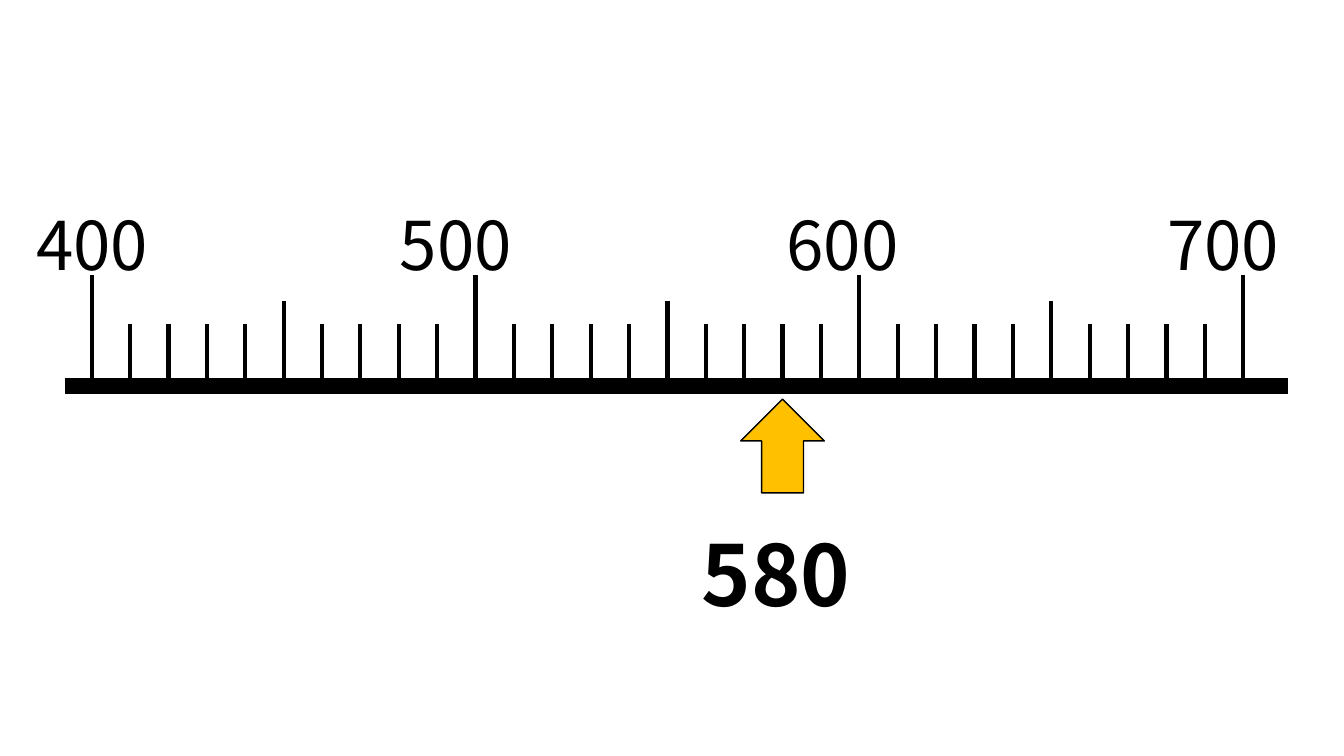
from lxml.etree import SubElement
from pptx import Presentation
from pptx.dml.color import RGBColor
from pptx.enum.shapes import MSO_CONNECTOR, MSO_SHAPE
from pptx.enum.text import MSO_ANCHOR, MSO_AUTO_SIZE
from pptx.oxml.ns import qn
from pptx.util import Inches, Pt

FONT = "Noto Sans CJK JP"
BLACK = "000000"
AMBER = "FFC000"
FIRST, LAST, INTERVAL = 400, 700, 10
MARKED = 580
LABEL_OFFSETS = {400: -0.65, 500: -0.85, 600: -0.82, 700: -0.85}


def color(value):
    return RGBColor.from_string(value)


def add_text(slide, text, left, top, width, height, size, bold=False):
    box = slide.shapes.add_textbox(Inches(left), Inches(top), Inches(width), Inches(height))
    frame = box.text_frame
    frame.word_wrap = True
    frame.auto_size = MSO_AUTO_SIZE.SHAPE_TO_FIT_TEXT
    frame.vertical_anchor = MSO_ANCHOR.TOP
    run = frame.paragraphs[0].add_run()
    run.text = text
    run.font.name = FONT
    run.font.size = Pt(size)
    run.font.bold = bold
    run.font.color.rgb = color(BLACK)


def add_line(slide, start_x, start_y, end_x, end_y, width):
    line = slide.shapes.add_connector(
        MSO_CONNECTOR.STRAIGHT, Inches(start_x), Inches(start_y), Inches(end_x), Inches(end_y)
    )
    line.line.color.rgb = color(BLACK)
    line.line.width = Pt(width)
    SubElement(line._element.spPr, qn("a:effectLst"))


def tick_height(value):
    if value % 100 == 0:
        return 1.1
    return 0.84 if value % 50 == 0 else 0.62


def add_number_line(slide, left, top, width, height):
    axis_y = top + height
    margin_left, margin_right = 0.27, 0.44
    scale = (width - margin_left - margin_right) / (LAST - FIRST)

    def position(value):
        return left + margin_left + (value - FIRST) * scale

    add_line(slide, left, axis_y, left + width, axis_y, 12)
    for value in range(FIRST, LAST + INTERVAL, INTERVAL):
        x = position(value)
        add_line(slide, x, axis_y, x, axis_y - tick_height(value), 3)
    for value, offset in LABEL_OFFSETS.items():
        add_text(slide, str(value), position(value) + offset, top, 1.46, 0.91, size=48)
    return position(MARKED)


def add_marker(slide, center_x, top):
    width, height = 0.83, 0.93
    arrow = slide.shapes.add_shape(
        MSO_SHAPE.UP_ARROW,
        Inches(center_x - width / 2), Inches(top), Inches(width), Inches(height),
    )
    arrow.shadow.inherit = False
    arrow.fill.solid()
    arrow.fill.fore_color.rgb = color(AMBER)
    arrow.line.color.rgb = color(BLACK)
    arrow.line.width = Pt(1)
    add_text(slide, str(MARKED), center_x - 0.9, top + 1.17, 2.09, 1.11, size=60, bold=True)


def main():
    presentation = Presentation()
    presentation.slide_width = Inches(13.33)
    presentation.slide_height = Inches(7.5)
    slide = presentation.slides.add_slide(presentation.slide_layouts[6])
    marked_x = add_number_line(slide, 0.64, 1.97, 12.13, 1.86)
    add_marker(slide, marked_x, 3.96)
    presentation.save("out.pptx")


if __name__ == "__main__":
    main()
